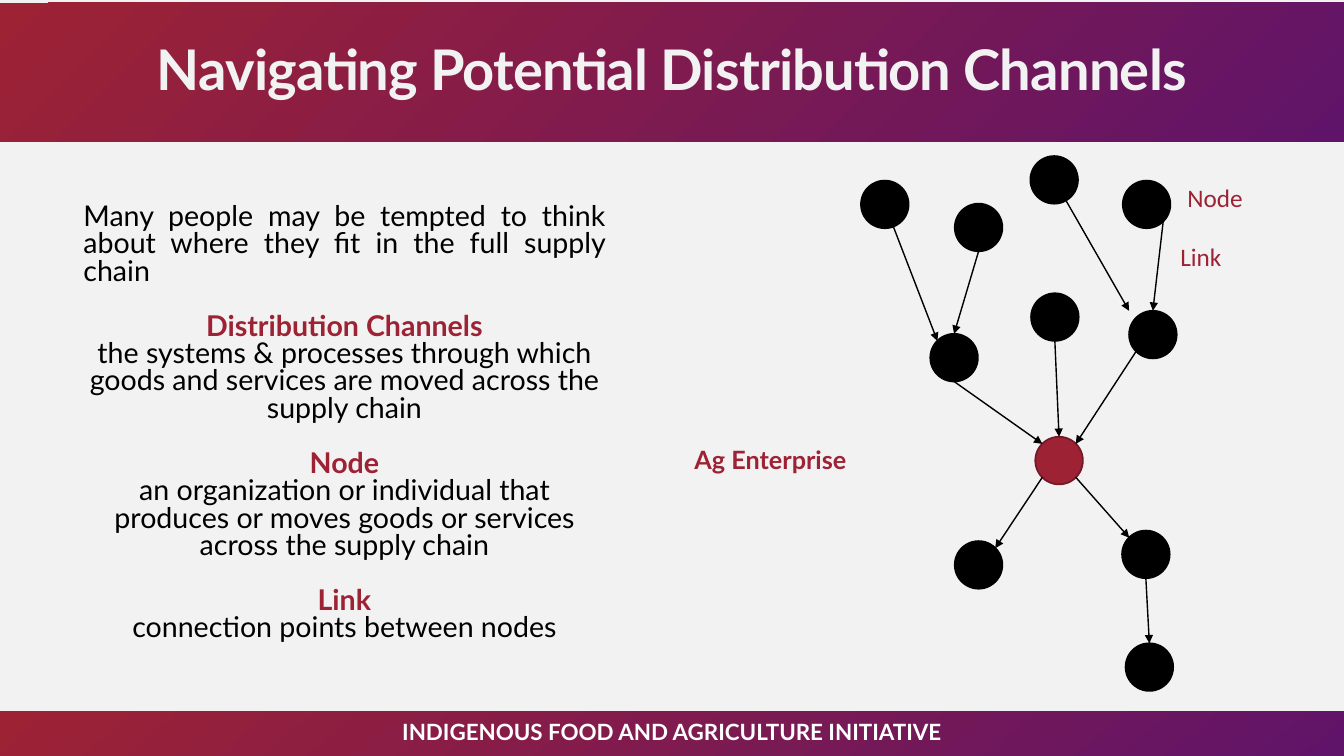
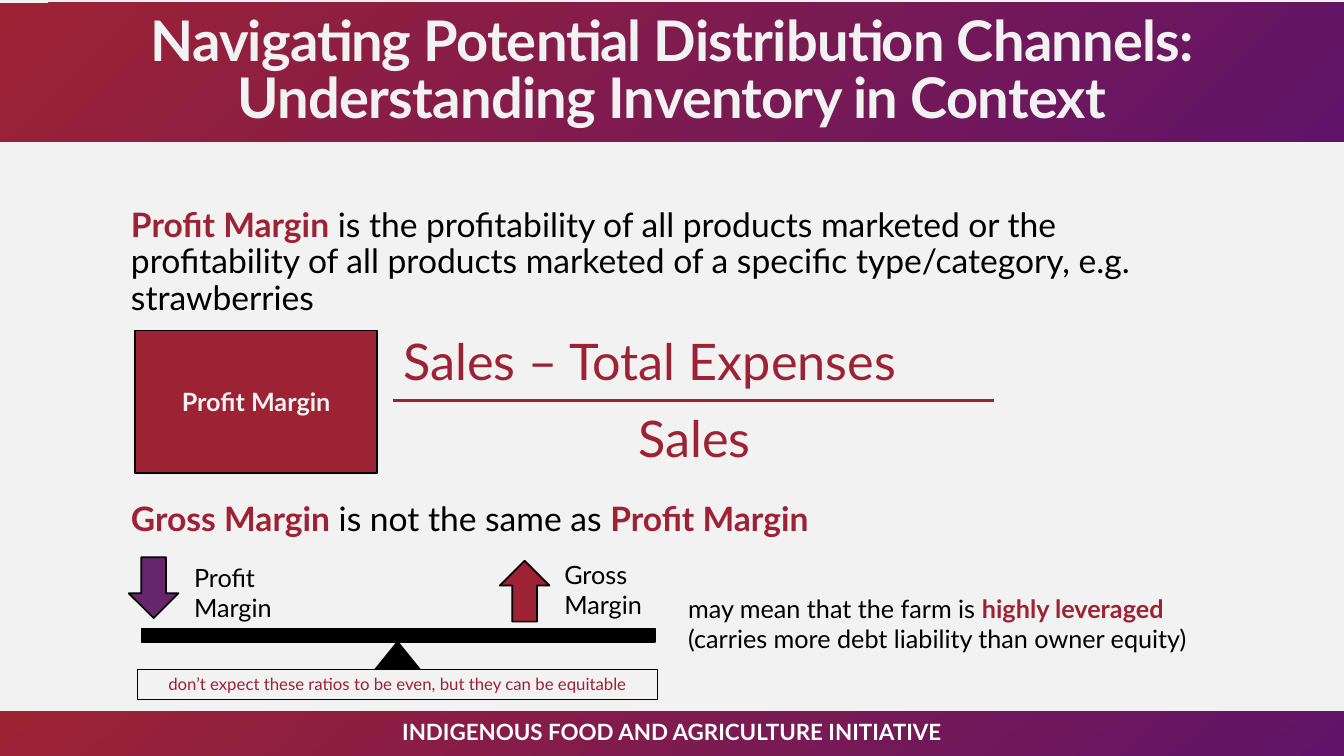
"""Build two slides on distribution channels and profit margins."""
from lxml import etree
from pptx import Presentation
from pptx.dml.color import RGBColor
from pptx.enum import shapes, text
from pptx.oxml import ns
from pptx.util import Pt

COLORS = dict(paper="F2F2F3", red="9D2234", deep_red="741926", violet="601469",
              plum="67256C", black="000000", white="FFFFFF")
SHAPE = shapes.MSO_SHAPE
ALIGN = text.PP_ALIGN
MIDDLE = text.MSO_ANCHOR.MIDDLE

FOOTER = "INDIGENOUS FOOD AND AGRICULTURE INITIATIVE"
BANDS = [((0, 2, 960, 99), 315), ((0, 508, 960, 33), 310)]

CHANNELS_TITLE = "Navigating Potential Distribution Channels"
INTRO = "Many people may be tempted to think about where they fit in the full supply chain"
DEFINITIONS = [
    ("Distribution Channels", "the systems & processes through which goods and services "
                              "are moved across the supply chain"),
    ("Node", "an organization or individual that produces or moves goods or services "
             "across the supply chain"),
    ("Link", "connection points between nodes"),
]
NODE_SIZE = 34
NODES = {
    "grower_a": (615, 129), "grower_b": (682, 145.5),
    "grower_c": (736, 111.5), "grower_d": (802, 129),
    "hub_left": (664.5, 238.5), "hub_middle": (736.5, 209.5), "hub_right": (806.5, 222),
    "enterprise": (739.5, 312),
    "buyer_left": (682, 386.5), "buyer_right": (801.5, 379), "consumer": (804, 459.5),
}
SITES = {
    "center": (0.5, 0.5), "corner": (0, 0), "top": (0.5, 0), "bottom": (0.5, 1),
    "top_left": (0.15, 0.15), "top_right": (0.85, 0.15),
    "bottom_left": (0.15, 0.85), "bottom_right": (0.85, 0.85),
}
LINKS = [
    ("grower_a", "center", "hub_left", "top_left"),
    ("grower_b", "bottom", "hub_left", "top"),
    ("grower_c", "center", "hub_right", "corner"),
    ("grower_d", "bottom_right", "hub_right", "top"),
    ("hub_left", "bottom", "enterprise", "top_left"),
    ("hub_middle", "bottom", "enterprise", "top"),
    ("hub_right", "bottom_left", "enterprise", "top_right"),
    ("enterprise", "bottom_left", "buyer_left", "top_right"),
    ("enterprise", "bottom_right", "buyer_right", "top_left"),
    ("buyer_right", "bottom", "consumer", "top"),
]
NETWORK_LABELS = [
    ("Ag Enterprise", (489, 314, 138, 29), dict(bold=True)),
    ("Node", (841, 127, 86, 29), dict(font="Calibri")),
    ("Link", (836, 169, 86, 29), dict(font="Calibri")),
]

MARGIN_TITLE = CHANNELS_TITLE + ": Understanding Inventory in Context"
MARGIN_TEXT = [
    "**Profit Margin** is the profitability of all products marketed or the profitability "
    "of all products marketed of a specific type/category, e.g. strawberries",
    "**Gross Margin** is not the same as **Profit Margin**",
]
FRACTION = [
    ("Sales – Total Expenses", (281, 232.5, 482, 51), ALIGN.LEFT),
    ("Sales", (281, 287, 430, 51), ALIGN.CENTER),
]
SCALE_SHAPES = [
    (SHAPE.RECTANGLE, (101, 449, 367, 9.5), "black"),
    (SHAPE.ISOSCELES_TRIANGLE, (252, 458.5, 64, 39.5), "black"),
    (SHAPE.DOWN_ARROW, (92, 398, 35.5, 43.5), "plum"),
    (SHAPE.UP_ARROW, (357, 400.5, 35.5, 43.5), "red"),
]
SCALE_LABELS = [
    (["Profit", "Margin"], (131.5, 398, 85, 51)),
    (["Gross", "Margin"], (396, 396, 85, 51)),
    (["may mean that the farm is **highly leveraged**",
      "(carries more debt liability than owner equity)"], (484.5, 420, 389, 51)),
]
SCALE_NOTE = "don’t expect these ratios to be even, but they can be equitable"


def rgb(name):
    return RGBColor.from_string(COLORS[name])


def write(frame, lines, size=18, color="black", font="Lato", bold=False, align=ALIGN.LEFT,
          spacing=1.0, anchor=text.MSO_ANCHOR.TOP, tracking=None):
    """Fill a frame with lines, where ** marks bold red words."""
    frame.word_wrap = True
    frame.auto_size = text.MSO_AUTO_SIZE.NONE
    frame.vertical_anchor = anchor
    for number, line in enumerate([lines] if isinstance(lines, str) else lines):
        paragraph = frame.add_paragraph() if number else frame.paragraphs[0]
        paragraph.alignment, paragraph.line_spacing = align, spacing
        for position, words in enumerate(line.split("**")):
            if not words:
                continue
            accent = position % 2 == 1
            run = paragraph.add_run()
            run.text = words
            run.font.name, run.font.size = font, Pt(size)
            run.font.bold = bold or accent
            run.font.color.rgb = rgb("red" if accent else color)
            if tracking:
                run.font._element.set("spc", str(tracking))
    return frame


def place(part, box):
    part.left, part.top, part.width, part.height = map(Pt, box)


def label(slide, lines, box, **style):
    return write(slide.shapes.add_textbox(*map(Pt, box)).text_frame, lines, **style)


def draw(slide, kind, box, fill, line="black", weight=1.25):
    part = slide.shapes.add_shape(kind, *map(Pt, box))
    part.shadow.inherit = False
    part.fill.solid()
    part.fill.fore_color.rgb = rgb(fill)
    part.line.color.rgb = rgb(line)
    part.line.width = Pt(weight)
    return part


def connect(slide, start, end, color="black", weight=1, arrow=True):
    link = slide.shapes.add_connector(shapes.MSO_CONNECTOR.STRAIGHT, *map(Pt, start + end))
    link.line.color.rgb = rgb(color)
    link.line.width = Pt(weight)
    if arrow:
        etree.SubElement(link.line._get_or_add_ln(), ns.qn("a:tailEnd"), type="triangle")
    etree.SubElement(link._element.spPr, ns.qn("a:effectLst"))


def add_slide(deck, title):
    slide = deck.slides.add_slide(deck.slide_layouts[5])
    for depth, (box, angle) in enumerate(BANDS, start=2):
        band = draw(slide, SHAPE.RECTANGLE, box, "red")
        band.line.fill.background()
        band.fill.gradient()
        band.fill.gradient_angle = angle
        for stop, color, position in zip(band.fill.gradient_stops, ("red", "violet"), (0, 1)):
            stop.color.rgb, stop.position = rgb(color), position
        slide.shapes._spTree.insert(depth, band._element)
    place(slide.shapes.title, (66, 0, 828, 104.5))
    write(slide.shapes.title.text_frame, title, size=40, color="paper", bold=True,
          align=ALIGN.CENTER, spacing=0.85, anchor=MIDDLE, tracking=-50)
    label(slide, FOOTER, (66, 508, 828, 29), size=16, color="white", bold=True,
          align=ALIGN.CENTER, anchor=MIDDLE)
    return slide


def site(node, name):
    return tuple(edge + NODE_SIZE * share for edge, share in zip(NODES[node], SITES[name]))


def add_channels(deck):
    slide = add_slide(deck, CHANNELS_TITLE)
    lines = [INTRO]
    for term, meaning in DEFINITIONS:
        lines += [f"**{term}**", meaning]
    body = label(slide, lines, (52.5, 142.5, 387, 336), size=20.4, align=ALIGN.CENTER,
                 spacing=0.8)
    body.paragraphs[0].alignment = ALIGN.JUSTIFY
    for term in body.paragraphs[1::2]:
        term.space_before = Pt(19.6)
    for name, corner in NODES.items():
        colors = ("red", "deep_red") if name == "enterprise" else ("black", "black")
        draw(slide, SHAPE.OVAL, corner + (NODE_SIZE, NODE_SIZE), *colors)
    for source, leave, target, arrive in LINKS:
        connect(slide, site(source, leave), site(target, arrive))
    for words, box, style in NETWORK_LABELS:
        label(slide, words, box, color="red", **style)


def add_margins(deck):
    slide = add_slide(deck, MARGIN_TITLE)
    body = label(slide, MARGIN_TEXT, (86.5, 145.5, 792, 317), size=24, spacing=0.9)
    body.paragraphs[1].space_before = Pt(132)
    margin = draw(slide, SHAPE.RECTANGLE, (96.5, 236, 173, 102), "red")
    write(margin.text_frame, "Profit Margin", color="paper", bold=True,
          align=ALIGN.CENTER, anchor=MIDDLE)
    for words, box, align in FRACTION:
        label(slide, words, box, size=36, color="red", align=align)
    connect(slide, (281, 286), (710, 286), color="red", weight=2.25, arrow=False)
    for kind, box, color in SCALE_SHAPES:
        draw(slide, kind, box, color)
    for lines, box in SCALE_LABELS:
        label(slide, lines, box)
    note = draw(slide, SHAPE.RECTANGLE, (98.5, 478, 371, 21.8), "paper", weight=0.75)
    write(note.text_frame, SCALE_NOTE, size=12, color="red", align=ALIGN.CENTER)


def main():
    deck = Presentation()
    deck.slide_width, deck.slide_height = Pt(960), Pt(540)
    backdrop = deck.slide_master.background.fill
    backdrop.solid()
    backdrop.fore_color.rgb = rgb("paper")
    add_channels(deck)
    add_margins(deck)
    deck.save("out.pptx")


if __name__ == "__main__":
    main()
